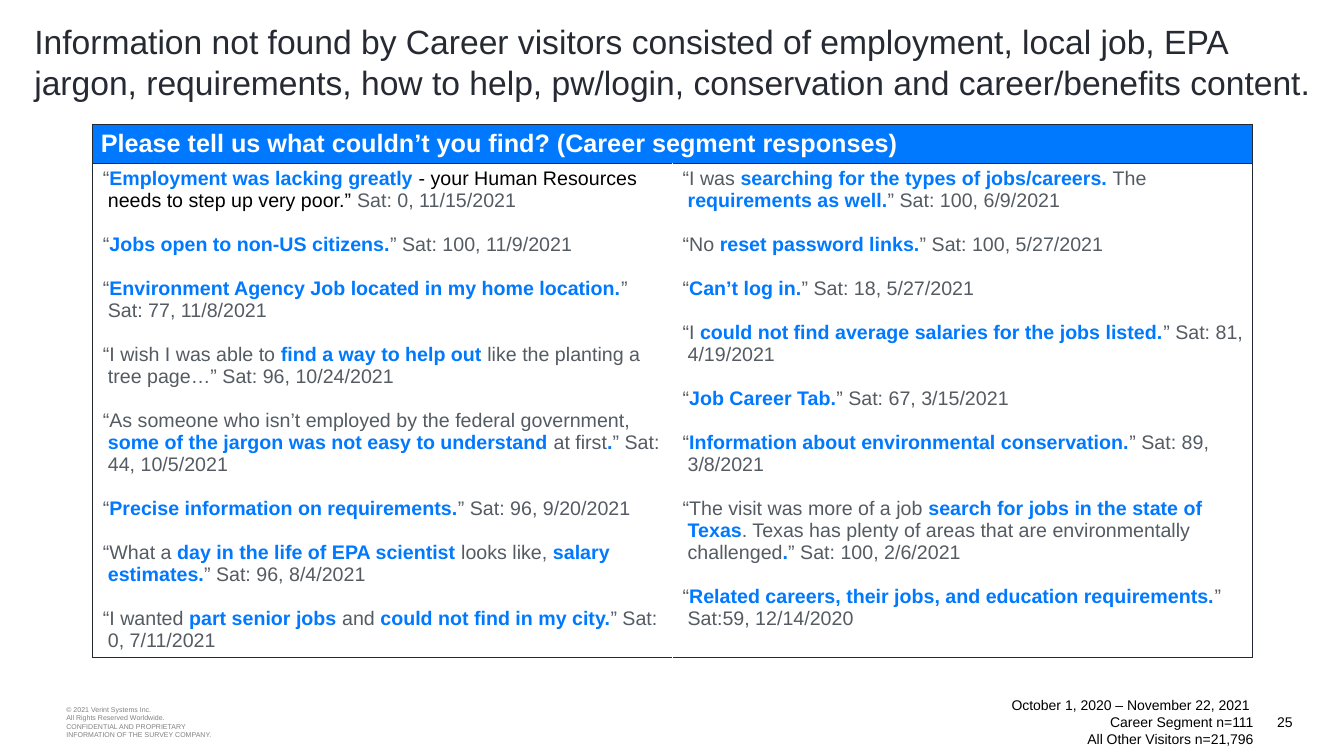
import dataclasses

import lxml.etree
import pptx
import pptx.dml.color
import pptx.enum.text
import pptx.oxml.ns
import pptx.util

PX = 9144  # one hundredth of an inch
ALIGN = pptx.enum.text.PP_ALIGN
ANCHOR = pptx.enum.text.MSO_ANCHOR


@dataclasses.dataclass(frozen=True)
class Theme:
    font: str = "Arial"
    blue: str = "0079FF"
    white: str = "FFFFFF"
    black: str = "000000"
    title: str = "262A32"
    body: str = "545B62"
    border: str = "252931"
    legal: str = "808080"
    title_size: int = 24
    header_size: int = 18
    quote_size: int = 14
    footer_size: int = 10
    legal_size: int = 5
    quote_gap: float = 15.75
    border_width: float = 0.75


THEME = Theme()

TITLE = ("Information not found by Career visitors consisted of employment, local job, EPA "
         "jargon, requirements, how to help, pw/login, conservation and career/benefits content.")
HEADER = "Please tell us what couldn’t you find? (Career segment responses)"

# *...* is highlighted, ~...~ is black
QUOTES = [
    [
        "“*Employment was lacking greatly *~- your Human Resources needs to step up very poor.” ~"
        "Sat: 0, 11/15/2021",
        "“*Jobs open to non-US citizens.*” Sat: 100, 11/9/2021",
        "“*Environment Agency Job located in my home location.*” Sat: 77, 11/8/2021",
        "“I wish I was able to *find a way to help out* like the planting a tree page…” "
        "Sat: 96, 10/24/2021",
        "“As someone who isn’t employed by the federal government, "
        "*some of the jargon was not easy to understand* at first*.*” Sat: 44, 10/5/2021",
        "“*Precise information on requirements.*” Sat: 96, 9/20/2021",
        "“What a *day in the life of EPA scientist* looks like, *salary estimates.*” "
        "Sat: 96, 8/4/2021",
        "“I wanted *part senior jobs* and *could not find in my city.*” Sat: 0, 7/11/2021",
    ],
    [
        "“I was *searching for the types of jobs/careers.* The *requirements as well.*” "
        "Sat: 100, 6/9/2021",
        "“No *reset password links.*” Sat: 100, 5/27/2021",
        "“*Can’t log in.*” Sat: 18, 5/27/2021",
        "“I *could not find average salaries for the jobs listed.*” Sat: 81, 4/19/2021",
        "“*Job Career Tab.*” Sat: 67, 3/15/2021",
        "“*Information about environmental conservation.*” Sat: 89, 3/8/2021",
        "“The visit was more of a job *search for jobs in the state of Texas*. Texas has plenty "
        "of areas that are environmentally challenged*.*” Sat: 100, 2/6/2021",
        "“*Related careers, their jobs, and education requirements.*” Sat:59, 12/14/2020",
    ],
]
LEGAL = ["© 2021 Verint Systems Inc.", "All Rights Reserved Worldwide.",
         "CONFIDENTIAL AND PROPRIETARY", "INFORMATION OF THE SURVEY COMPANY."]
SAMPLE = ["October 1, 2020 – November 22, 2021 ", "Career Segment n=111",
          "All Other Visitors n=21,796"]


def rgb(code):
    return pptx.dml.color.RGBColor.from_string(code)


def styled_spans(text, color):
    """Yield text, colour and weight for each marked stretch."""
    for index, piece in enumerate(text.split("*")):
        if index % 2:
            yield piece, THEME.blue, True
            continue
        for part_index, part in enumerate(piece.split("~")):
            if part:
                yield part, THEME.black if part_index % 2 else color, False


def write(frame, lines, *, size, color, bold=False, align=ALIGN.LEFT, gap=0, indent=None):
    """Fill a text frame with one paragraph for each line."""
    frame.word_wrap = True
    for index, line in enumerate(lines):
        para = frame.add_paragraph() if index else frame.paragraphs[0]
        para.alignment = align
        para.space_before = pptx.util.Pt(gap if index else 0)
        if indent:
            properties = para._p.get_or_add_pPr()
            properties.set("marL", str(indent[0] * PX))
            properties.set("indent", str(indent[1] * PX))
        for text, span_color, strong in styled_spans(line, color):
            span = para.add_run()
            span.text = text
            span.font.name = THEME.font
            span.font.size = pptx.util.Pt(size)
            span.font.bold = bold or strong
            span.font.color.rgb = rgb(span_color)


def draw_borders(cell, sides):
    """Draw the named sides (L, R, T, B) of a table cell."""
    properties = cell._tc.get_or_add_tcPr()
    name = pptx.oxml.ns.qn
    for position, side in enumerate(side for side in "LRTB" if side in sides):
        line = lxml.etree.Element(name(f"a:ln{side}"),
                                  w=str(pptx.util.Pt(THEME.border_width)))
        fill = lxml.etree.SubElement(line, name("a:solidFill"))
        lxml.etree.SubElement(fill, name("a:srgbClr"), val=THEME.border)
        properties.insert(position, line)


def place_title(page, left, top, width, height):
    title = page.shapes.title
    title.left, title.top, title.width, title.height = (
        value * PX for value in (left, top, width, height))
    frame = title.text_frame
    write(frame, [TITLE], size=THEME.title_size, color=THEME.title)
    frame.vertical_anchor = ANCHOR.TOP
    frame.auto_size = pptx.enum.text.MSO_AUTO_SIZE.NONE


def place_quotes(page, left, top, width, header_height, body_height):
    table = page.shapes.add_table(2, 2, left * PX, top * PX, width * PX,
                                  (header_height + body_height) * PX).table
    for column in table.columns:
        column.width = width * PX // 2
    table.rows[0].height = header_height * PX
    table.rows[1].height = body_height * PX
    for cell in table.iter_cells():
        cell.margin_left = cell.margin_right = 8 * PX
        cell.margin_top = cell.margin_bottom = 4 * PX

    # Header across both columns
    header = table.cell(0, 0)
    header.merge(table.cell(0, 1))
    write(header.text_frame, [HEADER], size=THEME.header_size, color=THEME.white, bold=True)
    header.vertical_anchor = ANCHOR.MIDDLE
    for column in range(2):
        cell = table.cell(0, column)
        cell.fill.solid()
        cell.fill.fore_color.rgb = rgb(THEME.blue)
        draw_borders(cell, "LRTB")

    # One column of quotes in each body cell
    for column, (quotes, sides) in enumerate(zip(QUOTES, ("LTB", "RTB"))):
        cell = table.cell(1, column)
        write(cell.text_frame, quotes, size=THEME.quote_size, color=THEME.body,
              gap=THEME.quote_gap, indent=(7, -5))
        cell.fill.background()
        draw_borders(cell, sides)


def place_note(page, left, top, width, height, lines, **style):
    box = page.shapes.add_textbox(*(value * PX for value in (left, top, width, height)))
    box.text_frame.vertical_anchor = ANCHOR.MIDDLE
    write(box.text_frame, lines, **style)


def place_footer(page, top, height):
    footer = dict(size=THEME.footer_size, color=THEME.black, align=ALIGN.RIGHT)
    place_note(page, 56, top, 240, height, LEGAL, size=THEME.legal_size, color=THEME.legal)
    place_note(page, 1181, top, 111, height, ["25"], **footer)
    place_note(page, 653, top, 600, height, SAMPLE, indent=(0, -38), **footer)


def main():
    deck = pptx.Presentation()
    deck.slide_width, deck.slide_height = 1333 * PX, 750 * PX
    page = deck.slides.add_slide(deck.slide_layouts[5])
    place_title(page, 24, 16, 1286, 77)
    place_quotes(page, 92, 123, 1150, 39, 490)
    place_footer(page, 693, 47)
    deck.save("out.pptx")


if __name__ == "__main__":
    main()
